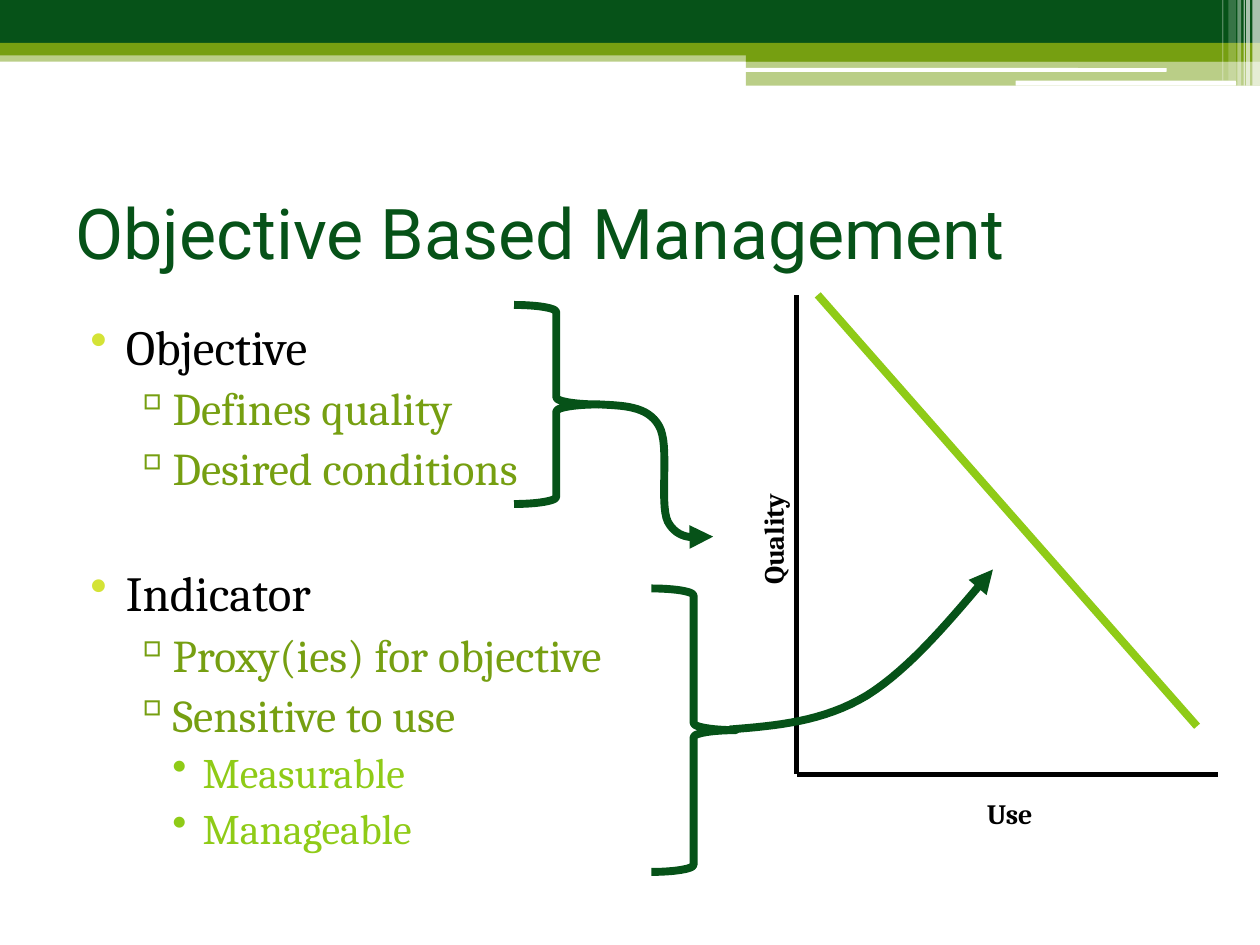
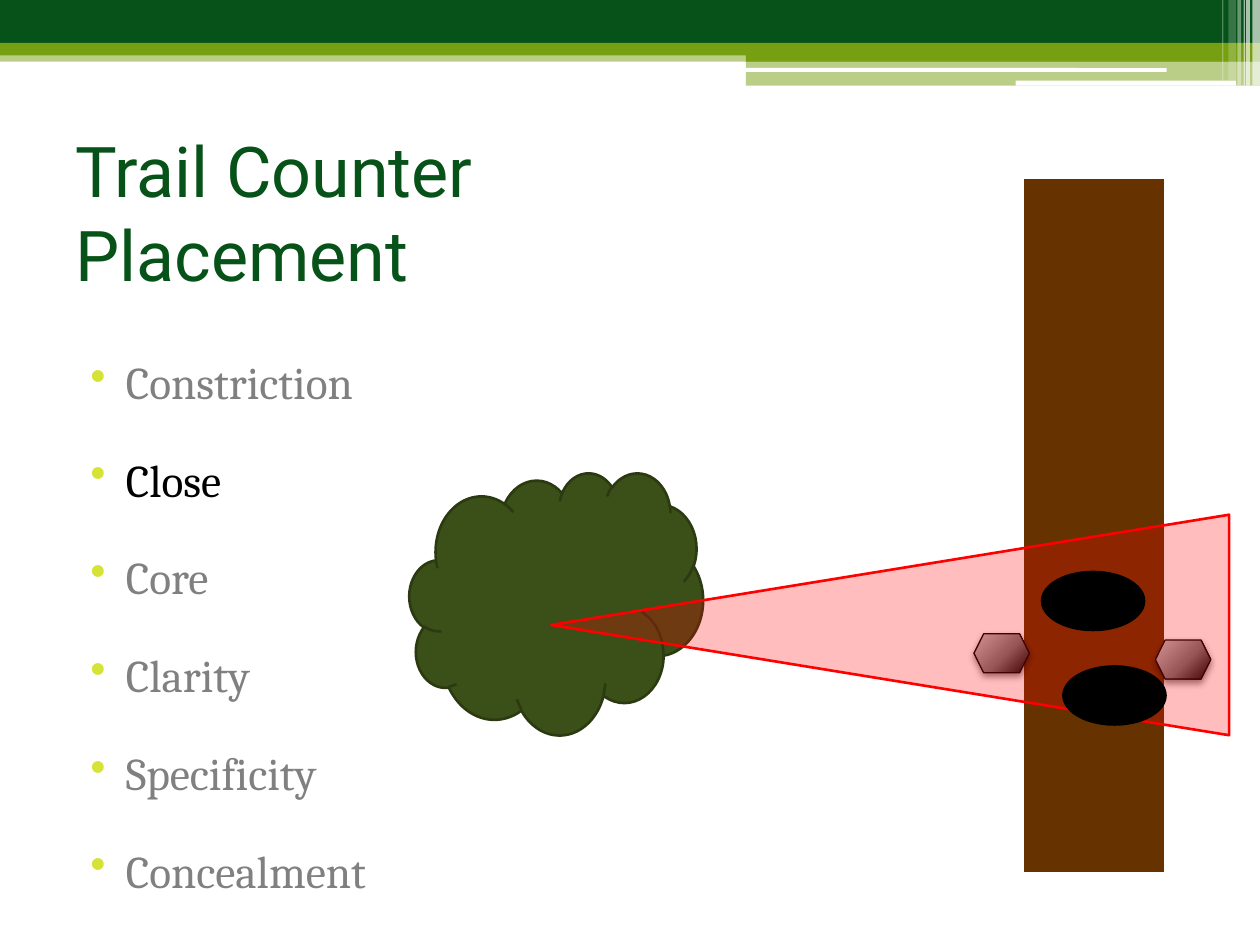
import lxml.etree
import pptx
import pptx.chart.data
import pptx.dml.color
import pptx.enum.chart
import pptx.enum.shapes
import pptx.enum.text
import pptx.oxml
import pptx.oxml.ns
import pptx.util

Inches = pptx.util.Inches
Pt = pptx.util.Pt
Shape = pptx.enum.shapes.MSO_SHAPE
qn = pptx.oxml.ns.qn
DRAWING = pptx.oxml.ns.nsdecls("a")
CHART = pptx.oxml.ns.nsdecls("c", "a")

DARK, OLIVE, LIME, YELLOW = "065218", "769F11", "8FCB17", "D4E336"
BLACK, WHITE, GREY, RED, BROWN = "000000", "FFFFFF", "808080", "FF0000", "663300"
BUSH, BUSH_EDGE = "3B4F18", "2C3A12"
TITLE_FONT, BODY_FONT = "Roboto", "Cambria"

BANDS = [
    (0, 0.4, 10, 0.09, OLIVE, 50),
    (0, 0, 10, 0.34, DARK, 100),
    (0, 0.34, 10, 0.1, OLIVE, 100),
    (5.92, 0.39, 4.08, 0.1, OLIVE, 100),
    (5.92, 0.48, 4.08, 0.2, OLIVE, 50),
]
RULES = [(5.91, 0.54, 3.35, 0.03), (8.06, 0.64, 1.75, 0.04)]
STRIPES = [
    (9.94, 0.06, 0.68, 65),
    (9.89, 0.03, 0.68, 65),
    (9.87, 0.01, 0.68, 60),
    (9.82, 0.03, 0.68, 40),
    (9.75, 0.06, 0.64, 20),
    (9.7, 0.01, 0.64, 30),
]

LEVELS = [
    dict(margin=0.4, hanging=0.28, bullet="•", bullet_color=YELLOW, color=BLACK, size=28),
    dict(margin=0.72, hanging=0.27, bullet="▫", bullet_color=OLIVE, color=OLIVE, size=26),
    dict(margin=1.01, hanging=0.24, bullet="•", bullet_color=LIME, color=LIME, size=24),
]
MANAGEMENT_POINTS = [
    (0, "Objective"),
    (1, "Defines quality"),
    (1, "Desired conditions"),
    (0, "Indicator"),
    (1, "Proxy(ies) for objective"),
    (1, "Sensitive to use"),
    (2, "Measurable"),
    (2, "Manageable"),
]
PLACEMENT_POINTS = ["Constriction", "Close", "Core", "Clarity", "Specificity", "Concealment"]
CURRENT_POINT = "Close"

QUALITY_BY_USE = [100, None, 80, None, 60, None, 40, 30, None, 10]
BRACES = [(4.08, 2.42, 0.67, 1.58), (5.17, 4.67, 0.67, 2.25)]
ARROWS = [
    [(4.75, 3.21), (4.94, 3.22), (5.14, 3.22), (5.23, 3.38), (5.32, 3.53), (5.23, 3.99),
     (5.3, 4.14), (5.38, 4.29), (5.52, 4.27), (5.66, 4.26)],
    [(5.79, 5.79), (6.16, 5.76), (6.53, 5.73), (6.88, 5.52), (7.23, 5.3), (7.55, 4.91),
     (7.88, 4.52)],
]
ROCKS = [(9.17, 5.08), (7.73, 5.03)]
FOOTPRINTS = [(8.27, 4.54), (8.44, 5.29)]

ROCK_FILL = f"""<a:gradFill {DRAWING} rotWithShape="1"><a:gsLst>
<a:gs pos="0"><a:srgbClr val="C8C8C8"/></a:gs>
<a:gs pos="55000"><a:srgbClr val="767676"/></a:gs>
<a:gs pos="100000"><a:srgbClr val="000000"/></a:gs></a:gsLst>
<a:path path="circle"><a:fillToRect l="-40000" t="-90000" r="140000" b="190000"/></a:path>
</a:gradFill>"""
ROCK_SHADOW = f"""<a:effectLst {DRAWING}>
<a:outerShdw blurRad="50800" dist="25400" dir="5400000" rotWithShape="0">
<a:srgbClr val="000000"><a:alpha val="45000"/></a:srgbClr></a:outerShdw></a:effectLst>"""
TREND_LINE = f"""<c:trendline {CHART}><c:spPr><a:ln w="57150">
<a:solidFill><a:srgbClr val="{LIME}"/></a:solidFill></a:ln></c:spPr>
<c:trendlineType val="linear"/><c:dispRSqr val="0"/><c:dispEq val="0"/></c:trendline>"""


def rgb(color):
    return pptx.dml.color.RGBColor.from_string(color)


def set_fill(shape, color, opacity=100):
    shape.fill.solid()
    shape.fill.fore_color.rgb = rgb(color)
    if opacity < 100:
        color_element = shape.fill._xPr.find(qn("a:solidFill"))[0]
        lxml.etree.SubElement(color_element, qn("a:alpha")).set("val", str(opacity * 1000))


def set_line(line, color, width):
    line.color.rgb = rgb(color)
    line.width = Pt(width)


def add_shape(slide, kind, box, fill=None, opacity=100, line=None):
    shape = slide.shapes.add_shape(kind, *map(Inches, box))
    shape.shadow.inherit = False
    if fill:
        set_fill(shape, fill, opacity)
    else:
        shape.fill.background()
    if line:
        set_line(shape.line, *line)
    else:
        shape.line.fill.background()
    return shape


def add_text_box(slide, box):
    text_frame = slide.shapes.add_textbox(*map(Inches, box)).text_frame
    text_frame.word_wrap = True
    return text_frame


def add_run(paragraph, text, font, size, color, bold=False):
    run = paragraph.add_run()
    run.text = text
    run.font.name = font
    run.font.size = Pt(size)
    run.font.bold = bold
    run.font.color.rgb = rgb(color)


def add_title(slide, lines, top, height):
    text_frame = add_text_box(slide, (0.5, top, 9, height))
    text_frame.vertical_anchor = pptx.enum.text.MSO_ANCHOR.MIDDLE
    paragraph = text_frame.paragraphs[0]
    for index, line in enumerate(lines):
        if index:
            paragraph.add_line_break()
        add_run(paragraph, line, TITLE_FONT, 40, DARK)


def add_point(text_frame, text, level, space_before=3, line_spacing=None, **changes):
    style = {**LEVELS[level], **changes}
    paragraph = text_frame.paragraphs[0]
    if paragraph.runs:
        paragraph = text_frame.add_paragraph()
    paragraph.level = level
    paragraph.space_before = Pt(space_before)
    paragraph.line_spacing = line_spacing
    properties = paragraph._p.get_or_add_pPr()
    properties.set("marL", str(Inches(style["margin"])))
    properties.set("indent", str(-Inches(style["hanging"])))
    bullet_color = lxml.etree.SubElement(properties, qn("a:buClr"))
    lxml.etree.SubElement(bullet_color, qn("a:srgbClr")).set("val", style["bullet_color"])
    lxml.etree.SubElement(properties, qn("a:buChar")).set("char", style["bullet"])
    add_run(paragraph, text, BODY_FONT, style["size"], style["color"])


def add_themed_slide(presentation):
    slide = presentation.slides.add_slide(presentation.slide_layouts[6])
    for *box, color, opacity in BANDS:
        add_shape(slide, Shape.RECTANGLE, box, color, opacity)
    for box in RULES:
        add_shape(slide, Shape.ROUNDED_RECTANGLE, box, WHITE)
    for left, width, height, opacity in STRIPES:
        add_shape(slide, Shape.RECTANGLE, (left, 0, width, height), WHITE, opacity)
    return slide


def set_layout(element, index, inner=False, **fractions):
    for layout in element.findall(qn("c:layout")):
        element.remove(layout)
    layout = lxml.etree.Element(qn("c:layout"))
    manual = lxml.etree.SubElement(layout, qn("c:manualLayout"))
    settings = {"xMode": "edge", "yMode": "edge", **fractions}
    if inner:
        settings = {"layoutTarget": "inner", **settings}
    for name, value in settings.items():
        lxml.etree.SubElement(manual, qn(f"c:{name}")).set("val", str(value))
    element.insert(index, layout)


def style_axis(axis, title, x, y):
    axis.has_major_gridlines = False
    axis.major_tick_mark = pptx.enum.chart.XL_TICK_MARK.NONE
    axis.minor_tick_mark = pptx.enum.chart.XL_TICK_MARK.NONE
    axis.tick_label_position = pptx.enum.chart.XL_TICK_LABEL_POSITION.NONE
    set_line(axis.format.line, BLACK, 3)
    text_frame = axis.axis_title.text_frame
    add_run(text_frame.paragraphs[0], title, BODY_FONT, 16, BLACK, True)
    set_layout(axis.axis_title._element, 1, x=x, y=y)
    return text_frame


def add_quality_chart(slide):
    data = pptx.chart.data.CategoryChartData()
    data.categories = ["1", "2", "3", "4"]
    data.add_series("Series 1", QUALITY_BY_USE)
    box = map(Inches, (5.67, 2.25, 4.08, 4.53))
    chart = slide.shapes.add_chart(pptx.enum.chart.XL_CHART_TYPE.LINE, *box, data).chart
    chart.has_legend = False
    chart.has_title = False
    chart.font.name = BODY_FONT
    chart.font.size = Pt(18)
    chart.font.color.rgb = rgb(BLACK)
    plot = chart.plots[0]
    plot.vary_by_categories = False
    series = plot.series[0]
    series.smooth = False
    series.format.line.fill.background()
    series._element.find(qn("c:cat")).addprevious(pptx.oxml.parse_xml(TREND_LINE))
    style_axis(chart.category_axis, "Use", 0.52, 0.89)
    quality_title = style_axis(chart.value_axis, "Quality", 0.07, 0.36)
    quality_title._txBody.bodyPr.set("rot", "-5400000")
    quality_title._txBody.bodyPr.set("vert", "horz")
    chart.value_axis.minimum_scale = 0
    chart.value_axis.maximum_scale = 100
    chart.value_axis.major_unit = 20
    plot_area = chart._chartSpace.chart.plotArea
    set_layout(plot_area, 0, inner=True, x=0.16, y=0.02, w=0.82, h=0.84)


def curve_points(controls, steps=16):
    points = [controls[0]]
    for start in range(0, len(controls) - 1, 3):
        segment = controls[start:start + 4]
        for step in range(1, steps + 1):
            t = step / steps
            weights = ((1 - t) ** 3, 3 * t * (1 - t) ** 2, 3 * t * t * (1 - t), t ** 3)
            points.append(tuple(sum(w * p[axis] for w, p in zip(weights, segment))
                                for axis in (0, 1)))
    return [(Inches(x), Inches(y)) for x, y in points]


def add_curved_arrow(slide, controls):
    start, *others = curve_points(controls)
    builder = slide.shapes.build_freeform(*start)
    builder.add_line_segments(others, close=False)
    arrow = builder.convert_to_shape()
    arrow.shadow.inherit = False
    arrow.fill.background()
    set_line(arrow.line, DARK, 4.5)
    line_element = arrow.line._get_or_add_ln()
    lxml.etree.SubElement(line_element, qn("a:round"))
    lxml.etree.SubElement(line_element, qn("a:tailEnd")).set("type", "triangle")


def add_rock(slide, left, top):
    rock = add_shape(slide, Shape.HEXAGON, (left, top, 0.44, 0.31), line=(BLACK, 0.75))
    properties = rock._element.spPr
    properties.replace(properties.find(qn("a:noFill")), pptx.oxml.parse_xml(ROCK_FILL))
    properties.replace(properties.find(qn("a:effectLst")), pptx.oxml.parse_xml(ROCK_SHADOW))


def add_trail(slide):
    trail = slide.shapes.add_connector(
        pptx.enum.shapes.MSO_CONNECTOR.STRAIGHT, *map(Inches, (8.68, 1.42, 8.68, 6.92)))
    set_line(trail.line, BROWN, 80)
    lxml.etree.SubElement(trail._element.spPr, qn("a:effectLst"))


def build_management_slide(presentation):
    slide = add_themed_slide(presentation)
    add_title(slide, ["Objective Based Management"], 1.25, 1.17)
    text_frame = add_text_box(slide, (0.5, 2.46, 5.33, 4.73))
    for level, text in MANAGEMENT_POINTS:
        add_point(text_frame, text, level, space_before=39 if text == "Indicator" else 3)
    add_quality_chart(slide)
    for brace, arrow in zip(BRACES, ARROWS):
        add_shape(slide, Shape.RIGHT_BRACE, brace, line=(DARK, 4.5))
        add_curved_arrow(slide, arrow)


def build_placement_slide(presentation):
    slide = add_themed_slide(presentation)
    add_trail(slide)
    add_rock(slide, *ROCKS[0])
    text_frame = add_text_box(slide, (0.5, 2.46, 9, 4.73))
    for text in PLACEMENT_POINTS:
        color = BLACK if text == CURRENT_POINT else GREY
        add_point(text_frame, text, 0, line_spacing=1.7, size=25.9, color=color)
    add_title(slide, ["Trail Counter ", "Placement"], 0.93, 1.49)
    add_shape(slide, Shape.CLOUD, (3.25, 3.75, 2.33, 2.08), BUSH, line=(BUSH_EDGE, 1.5))
    add_rock(slide, *ROCKS[1])
    beam = add_shape(slide, Shape.ISOSCELES_TRIANGLE, (6.19, 2.27, 1.75, 5.38), RED, 26, (RED, 1.5))
    beam.rotation = 270
    for left, top in FOOTPRINTS:
        add_shape(slide, Shape.OVAL, (left, top, 0.81, 0.46), BLACK, line=(BLACK, 1.5))


def main():
    presentation = pptx.Presentation()
    presentation.slide_width = Inches(10)
    presentation.slide_height = Inches(7.5)
    build_management_slide(presentation)
    build_placement_slide(presentation)
    presentation.save("out.pptx")


if __name__ == "__main__":
    main()
